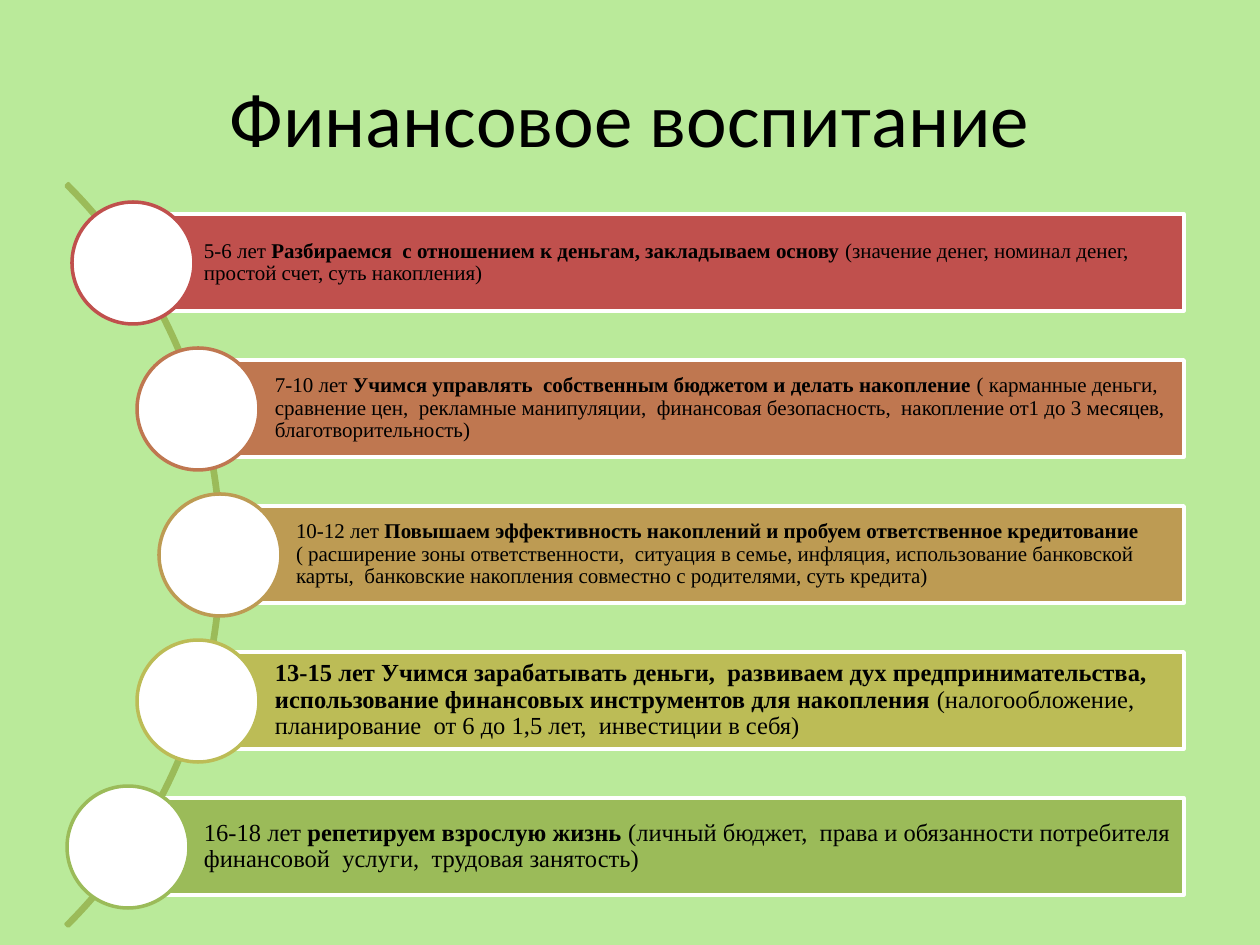
from dataclasses import dataclass

from pptx import Presentation
from pptx.dml.color import RGBColor
from pptx.enum.shapes import MSO_SHAPE
from pptx.enum.text import MSO_ANCHOR, PP_ALIGN
from pptx.util import Emu, Pt

PX_PER_INCH = 126
COLORS = {
    "background": "BAEA9A",
    "white": "FFFFFF",
    "black": "000000",
    "red": "C0504D",
    "copper": "BF7750",
    "ochre": "BD9B53",
    "olive": "BCBC56",
    "green": "9BBB59",
}
FIRST_BAR_TOP, BAR_PITCH = 214, 146
BAR_RIGHT, BAR_HEIGHT = 1184, 97
CIRCLE_SIZE = 122
TEXT_INSET = 77


@dataclass
class Stage:
    color: str
    bar_left: int
    circle_left: int
    size: int
    margin: int
    runs: list[tuple[str, bool]]


STAGES = [
    Stage("red", 127, 72, 12, 4, [
        ("5-6 лет ", False),
        ("Разбираемся  с отношением к деньгам, закладываем основу ", True),
        ("(значение денег, номинал денег, простой счет, суть накопления)", False),
    ]),
    Stage("copper", 198, 137, 12, 4, [
        ("7-10 лет ", False),
        ("Учимся управлять  собственным бюджетом и делать накопление ", True),
        ("( карманные деньги,  сравнение цен,  рекламные манипуляции,  "
         "финансовая безопасность,  накопление от1 до 3 месяцев,  "
         "благотворительность)", False),
    ]),
    Stage("ochre", 219, 159, 12, 4, [
        ("10-12 лет ", False),
        ("Повышаем эффективность накоплений и пробуем ответственное "
         "кредитование ", True),
        ("( расширение зоны ответственности,  ситуация в семье, инфляция, "
         "использование банковской карты,  банковские накопления совместно "
         "с родителями, суть кредита)", False),
    ]),
    Stage("olive", 198, 137, 14, 5, [
        ("13-15 лет Учимся зарабатывать деньги,  развиваем дух "
         "предпринимательства,  использование финансовых инструментов для "
         "накопления ", True),
        ("(налогообложение,  планирование  от 6 до 1,5 лет,  инвестиции в себя)",
         False),
    ]),
    Stage("green", 127, 67, 14, 5, [
        ("16-18 лет ", False),
        ("репетируем взрослую жизнь ", True),
        ("(личный бюджет,  права и обязанности потребителя финансовой  услуги,  "
         "трудовая занятость)", False),
    ]),
]


def px(n: int) -> Emu:
    return Emu(round(n * 914400 / PX_PER_INCH))


def rgb(name: str) -> RGBColor:
    return RGBColor.from_string(COLORS[name])


def write(tf, runs: list[tuple[str, bool]], *, font: str, size: int,
          align=PP_ALIGN.LEFT, spacing: float = 1.0,
          margins: tuple[int, int, int, int] = (13, 6, 13, 6)) -> None:
    """Fill a frame with one paragraph of (text, bold) runs; margins run from left clockwise."""
    tf.word_wrap = True
    tf.vertical_anchor = MSO_ANCHOR.MIDDLE
    tf.margin_left, tf.margin_top, tf.margin_right, tf.margin_bottom = map(px, margins)
    p = tf.paragraphs[0]
    p.alignment = align
    p.line_spacing = spacing
    for text, bold in runs:
        r = p.add_run()
        r.text = text
        r.font.name = font
        r.font.size = Pt(size)
        r.font.bold = bold
        r.font.color.rgb = rgb("black")


def add_shape(s, kind, left: int, top: int, width: int, height: int, *,
              line: str, fill: str | None = None):
    sp = s.shapes.add_shape(kind, px(left), px(top), px(width), px(height))
    sp.shadow.inherit = False
    if fill:
        sp.fill.solid()
        sp.fill.fore_color.rgb = rgb(fill)
    else:
        sp.fill.background()
    sp.line.color.rgb = rgb(line)
    sp.line.width = Pt(2)
    return sp


def add_title(s, text: str) -> None:
    title = s.shapes.title
    title.left, title.top, title.width, title.height = map(px, (63, 38, 1134, 158))
    write(title.text_frame, [(text, False)], font="Calibri", size=44,
          align=PP_ALIGN.CENTER)


def add_arc(s) -> None:
    arc = add_shape(s, MSO_SHAPE.BLOCK_ARC, -828, 30, 1050, 1050, line="green")
    for i, value in enumerate((189, 27, 0.003)):
        arc.adjustments[i] = value


def add_stage(s, stage: Stage, top: int) -> None:
    bar = add_shape(s, MSO_SHAPE.RECTANGLE, stage.bar_left, top,
                    BAR_RIGHT - stage.bar_left, BAR_HEIGHT,
                    line="white", fill=stage.color)
    m = stage.margin
    write(bar.text_frame, stage.runs, font="Times New Roman", size=stage.size,
          spacing=0.9, margins=(TEXT_INSET, m, m, m))
    add_shape(s, MSO_SHAPE.OVAL, stage.circle_left,
              top - (CIRCLE_SIZE - BAR_HEIGHT) // 2, CIRCLE_SIZE, CIRCLE_SIZE,
              line=stage.color, fill="white")


def main() -> None:
    prs = Presentation()
    prs.slide_width, prs.slide_height = px(1260), px(945)
    s = prs.slides.add_slide(prs.slide_layouts[5])
    s.background.fill.solid()
    s.background.fill.fore_color.rgb = rgb("background")
    add_title(s, "Финансовое воспитание")
    add_arc(s)
    for i, stage in enumerate(STAGES):
        add_stage(s, stage, FIRST_BAR_TOP + i * BAR_PITCH)
    prs.save("out.pptx")


if __name__ == "__main__":
    main()
